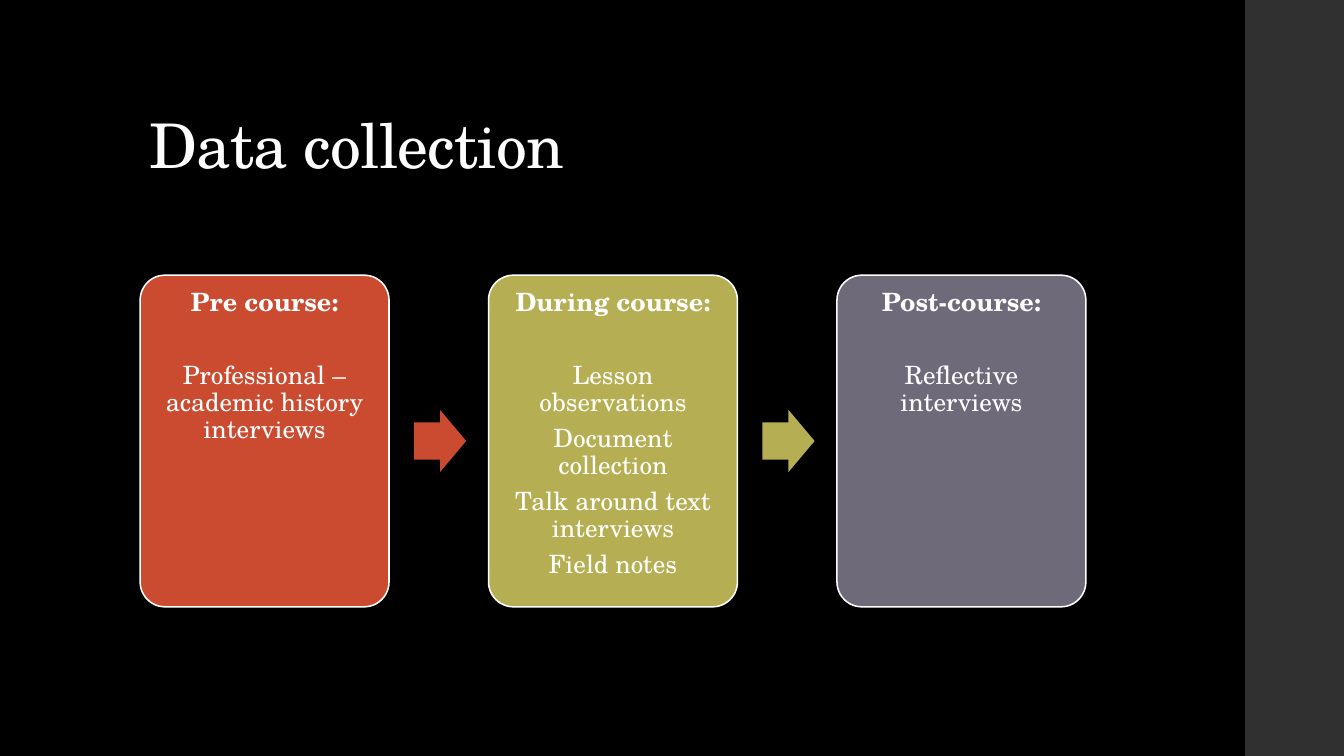
import pptx
import pptx.dml.color
import pptx.enum.shapes
import pptx.enum.text
import pptx.util

SHAPES = pptx.enum.shapes.MSO_SHAPE
ALIGN = pptx.enum.text.PP_ALIGN
ANCHOR = pptx.enum.text.MSO_ANCHOR
Inches = pptx.util.Inches
Pt = pptx.util.Pt

WIDTH, HEIGHT = 13.33, 7.5
FONT = "TeX Gyre Schola"
WHITE = "FFFFFF"
SIDEBAR_LEFT = 12.35
TITLE_BOX = (1.38, 0.4, 10.6, 1.45)
PROCESS_BOX = (1.39, 2.73, 9.38, 3.29)
STAGES = [
    ("CB4B30", "Pre course:", ["Professional – academic history interviews"]),
    ("B5AE53", "During course:", ["Lesson observations", "Document collection",
                                  "Talk around text interviews", "Field notes"]),
    ("6F6A7A", "Post-course:", ["Reflective interviews"]),
]


def color(hex_string):
    return pptx.dml.color.RGBColor.from_string(hex_string)


def apply(target, values):
    for name, value in values.items():
        setattr(target, name, value)


def add_filled(slide, preset, box, fill, adjustments=()):
    """Add a flat preset shape without outline."""
    shape = slide.shapes.add_shape(preset, *map(Inches, box))
    shape.shadow.inherit = False
    shape.fill.solid()
    shape.fill.fore_color.rgb = color(fill)
    shape.line.fill.background()
    for index, value in enumerate(adjustments):
        shape.adjustments[index] = value
    return shape


def write(paragraph, text, size, bold=False, **layout):
    paragraph.text = text
    apply(paragraph, {"line_spacing": 0.9, **layout})
    font = paragraph.runs[0].font
    apply(font, {"name": FONT, "size": Pt(size), "bold": bold})
    font.color.rgb = color(WHITE)


def add_title(slide, box, text):
    title = slide.shapes.title
    apply(title, dict(zip(("left", "top", "width", "height"), map(Inches, box))))
    frame = title.text_frame
    apply(frame, {"vertical_anchor": ANCHOR.BOTTOM, "word_wrap": True,
                  "auto_size": pptx.enum.text.MSO_AUTO_SIZE.NONE})
    paragraph = frame.paragraphs[0]
    write(paragraph, text, 44, alignment=ALIGN.LEFT)
    paragraph.runs[0].font._element.set("spc", "-50")


def add_card(slide, box, fill, heading, items):
    card = add_filled(slide, SHAPES.ROUNDED_RECTANGLE, box, fill, [0.1])
    card.line.color.rgb = color(WHITE)
    card.line.width = Pt(1.1)
    frame = card.text_frame
    margins = dict.fromkeys(
        ("margin_left", "margin_top", "margin_right", "margin_bottom"), Inches(0.07))
    apply(frame, {"word_wrap": True, "vertical_anchor": ANCHOR.TOP, **margins})
    write(frame.paragraphs[0], heading, 18, bold=True,
          alignment=ALIGN.CENTER, space_after=Pt(32.5))
    for item in items:
        write(frame.add_paragraph(), item, 18,
              alignment=ALIGN.CENTER, space_after=Pt(6.3))


def add_process(slide, box, stages):
    """Set cards in a row, with gaps of 0.4 card widths that hold the arrows."""
    left, top, width, height = box
    card_width = width / (1.4 * len(stages) - 0.4)
    arrow_width, arrow_height = 0.21 * card_width, 0.25 * card_width
    for index, (fill, heading, items) in enumerate(stages):
        card_left = left + index * 1.4 * card_width
        add_card(slide, (card_left, top, card_width, height), fill, heading, items)
        if index < len(stages) - 1:
            arrow_box = (card_left + 1.1 * card_width,
                         top + (height - arrow_height) / 2, arrow_width, arrow_height)
            add_filled(slide, SHAPES.RIGHT_ARROW, arrow_box, fill, [0.6, 0.5])


def main():
    presentation = pptx.Presentation()
    apply(presentation, {"slide_width": Inches(WIDTH), "slide_height": Inches(HEIGHT)})
    slide = presentation.slides.add_slide(presentation.slide_layouts[5])
    slide.background.fill.solid()
    slide.background.fill.fore_color.rgb = color("000000")
    add_filled(slide, SHAPES.RECTANGLE,
               (SIDEBAR_LEFT, 0, WIDTH - SIDEBAR_LEFT, HEIGHT), "303030")
    add_title(slide, TITLE_BOX, "Data collection")
    add_process(slide, PROCESS_BOX, STAGES)
    presentation.save("out.pptx")


if __name__ == "__main__":
    main()
